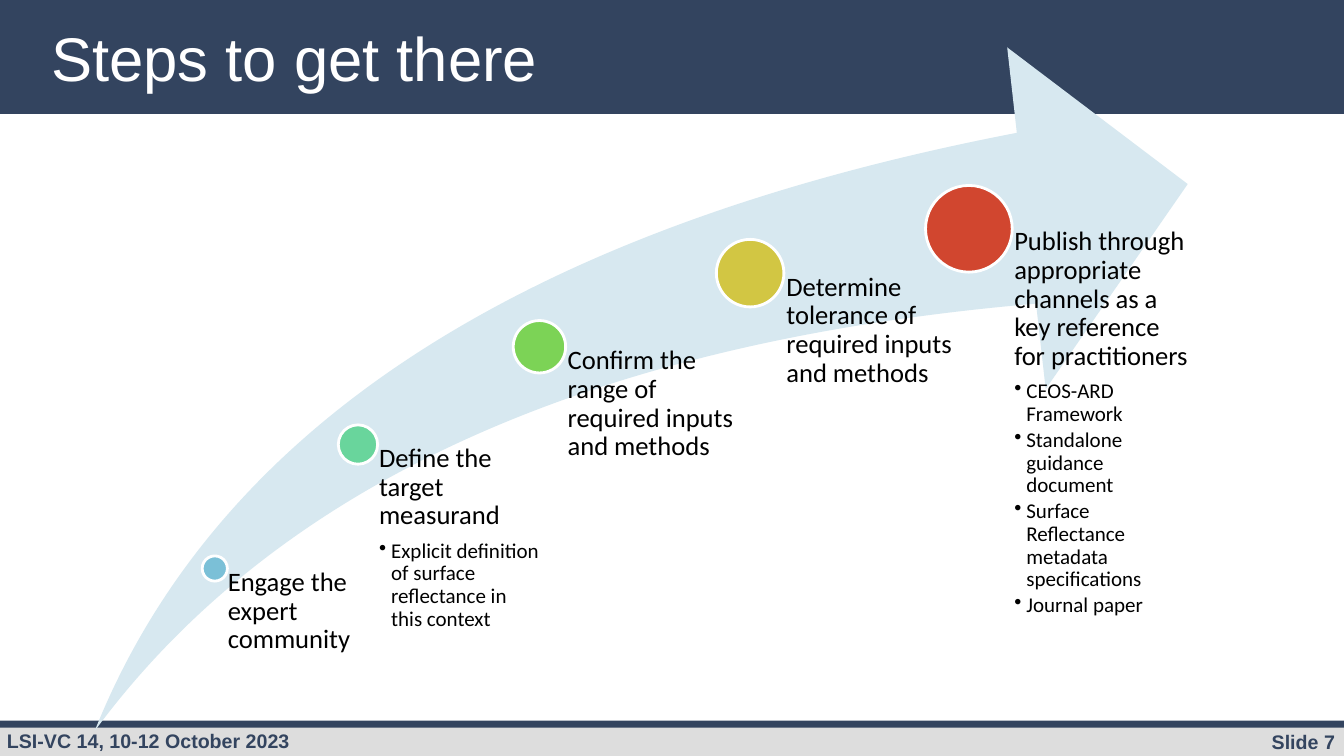
from dataclasses import dataclass

from lxml.etree import SubElement
from pptx import Presentation
from pptx.dml.color import RGBColor
from pptx.enum.shapes import MSO_SHAPE
from pptx.enum.text import MSO_ANCHOR, PP_ALIGN
from pptx.oxml.ns import qn
from pptx.shapes.autoshape import Shape
from pptx.text.text import TextFrame
from pptx.util import Inches, Pt

NAVY, GREY, PALE, WHITE, BLACK = "33445F", "DDDDDD", "D7E8F0", "FFFFFF", "000000"
BASE = 7.25  # lower edge shared by the arrow and all labels


@dataclass
class Step:
    x: float  # dot centre, also the left edge of the label
    y: float
    size: float
    color: str
    top: float
    width: float
    inset: float
    label: str
    items: tuple[str, ...] = ()


STEPS = [
    Step(2.13, 5.64, 0.25, "7BC0D7", 5.64, 1.42, 0.13, "Engage the expert community"),
    Step(3.55, 4.41, 0.39, "69D59C", 4.41, 1.8, 0.21, "Define the target measurand",
         ("Explicit definition of surface reflectance in this context",)),
    Step(5.35, 3.44, 0.52, "7CD356", 3.44, 2.09, 0.28,
         "Confirm the range of required inputs and methods"),
    Step(7.44, 2.71, 0.67, "D2C643", 2.71, 2.17, 0.36,
         "Determine tolerance of required inputs and methods"),
    Step(9.61, 2.27, 0.86, "D1462F", 2.26, 2.17, 0.45,
         "Publish through appropriate channels as a key reference for practitioners",
         ("CEOS-ARD Framework", "Standalone guidance document",
          "Surface Reflectance metadata specifications", "Journal paper")),
]

deck = Presentation()
deck.slide_width, deck.slide_height = Inches(13.33), Inches(7.5)
slide = deck.slides.add_slide(deck.slide_layouts[6])


def rgb(code: str) -> RGBColor:
    return RGBColor.from_string(code)


def shape(kind: MSO_SHAPE, x: float, y: float, w: float, h: float,
          fill: str, line: str = "") -> Shape:
    item = slide.shapes.add_shape(kind, Inches(x), Inches(y), Inches(w), Inches(h))
    item.shadow.inherit = False
    item.fill.solid()
    item.fill.fore_color.rgb = rgb(fill)
    if line:
        item.line.color.rgb = rgb(line)
        item.line.width = Pt(2)
    else:
        item.line.fill.background()
    return item


def frame(x: float, y: float, w: float, h: float) -> TextFrame:
    text = slide.shapes.add_textbox(Inches(x), Inches(y), Inches(w), Inches(h)).text_frame
    text.word_wrap = True
    return text


def write(text: TextFrame, words: str, size: float, color: str, font: str = "Arial",
          bold: bool = False, space: float = 1, after: float = 0,
          align: PP_ALIGN = PP_ALIGN.LEFT, bullet: bool = False) -> None:
    para = text.paragraphs[0]
    if para.runs:
        para = text.add_paragraph()
    if bullet:
        para.level = 1
        props = para._p.get_or_add_pPr()
        props.set("marL", str(Inches(0.12)))
        props.set("indent", str(-Inches(0.12)))
        SubElement(props, qn("a:buChar"), char="•")
    para.alignment = align
    para.line_spacing = space
    para.space_after = Pt(after)
    run = para.add_run()
    run.text = words
    run.font.name, run.font.size, run.font.bold = font, Pt(size), bold
    run.font.color.rgb = rgb(color)


def draw(step: Step) -> None:
    half = step.size / 2
    shape(MSO_SHAPE.OVAL, step.x - half, step.y - half, step.size, step.size,
          step.color, WHITE)
    text = frame(step.x, step.top, step.width, BASE - step.top)
    text.margin_left = Inches(step.inset)
    text.margin_top = text.margin_right = text.margin_bottom = 0
    write(text, step.label, 19, BLACK, "Calibri", space=0.9, after=6.65)
    for item in step.items:
        write(text, item, 15, BLACK, "Calibri", space=0.9, after=2.25, bullet=True)


# Header and footer bands
shape(MSO_SHAPE.RECTANGLE, 0, 0, 13.33, 1.13, NAVY)
shape(MSO_SHAPE.RECTANGLE, 0, 7.19, 13.33, 0.31, GREY)
shape(MSO_SHAPE.RECTANGLE, 0, 7.15, 13.33, 0.07, NAVY)
write(frame(11.23, 7.19, 2.11, 0.34), "Slide 7", 14, NAVY, bold=True, align=PP_ALIGN.RIGHT)
write(frame(-0.03, 7.18, 5.39, 0.34), "LSI-VC 14, 10-12 October 2023", 14, NAVY, bold=True)

# Title
title = frame(0.41, 0.19, 10.76, 0.85)
title.vertical_anchor = MSO_ANCHOR.MIDDLE
write(title, "Steps to get there", 44, WHITE, space=0.9)

# Rising arrow with its steps
arrow = shape(MSO_SHAPE.SWOOSH_ARROW, 0.94, 0.47, 10.84, 6.78, PALE)
arrow.adjustments[0] = arrow.adjustments[1] = 0.25
for step in STEPS:
    draw(step)

deck.save("out.pptx")
